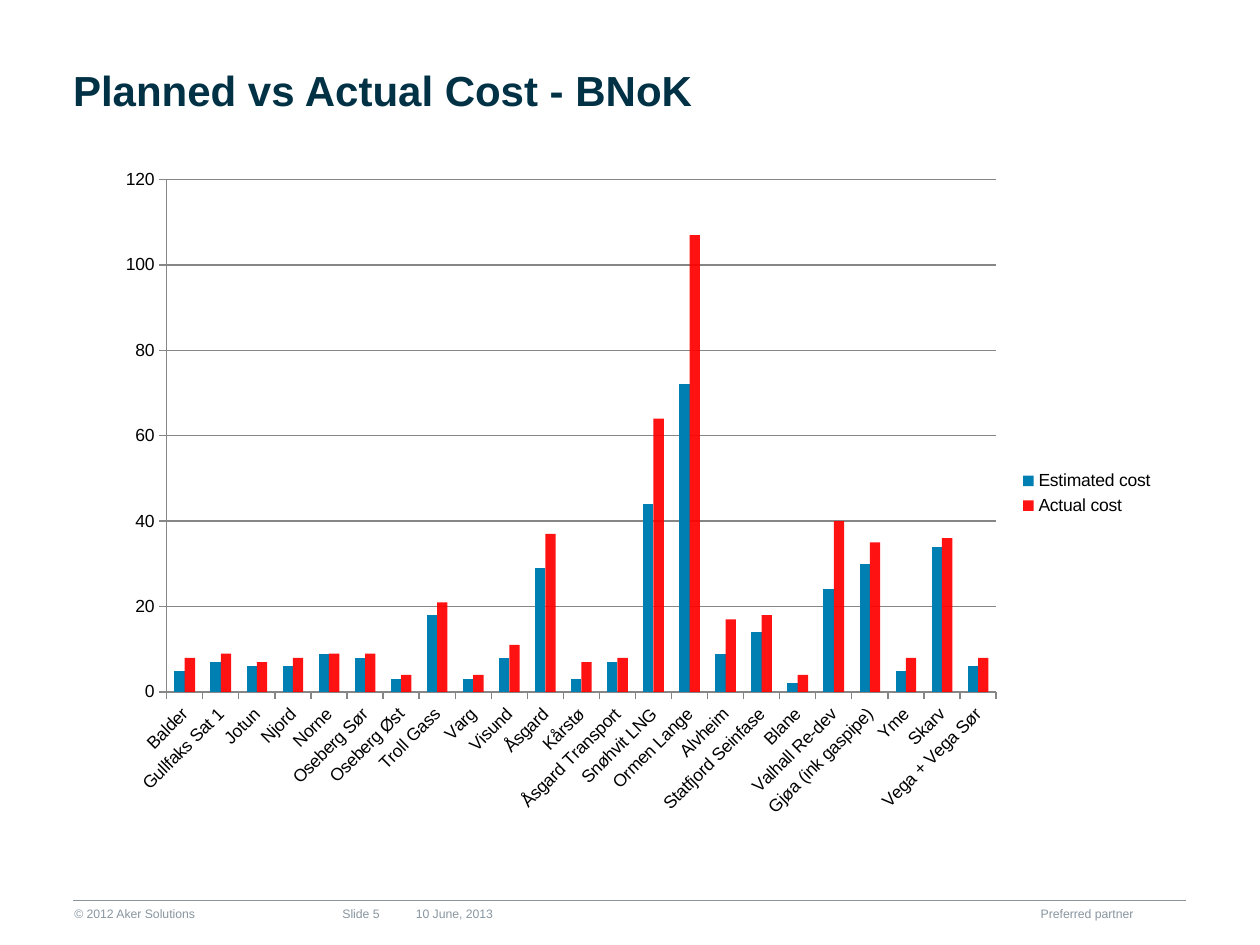
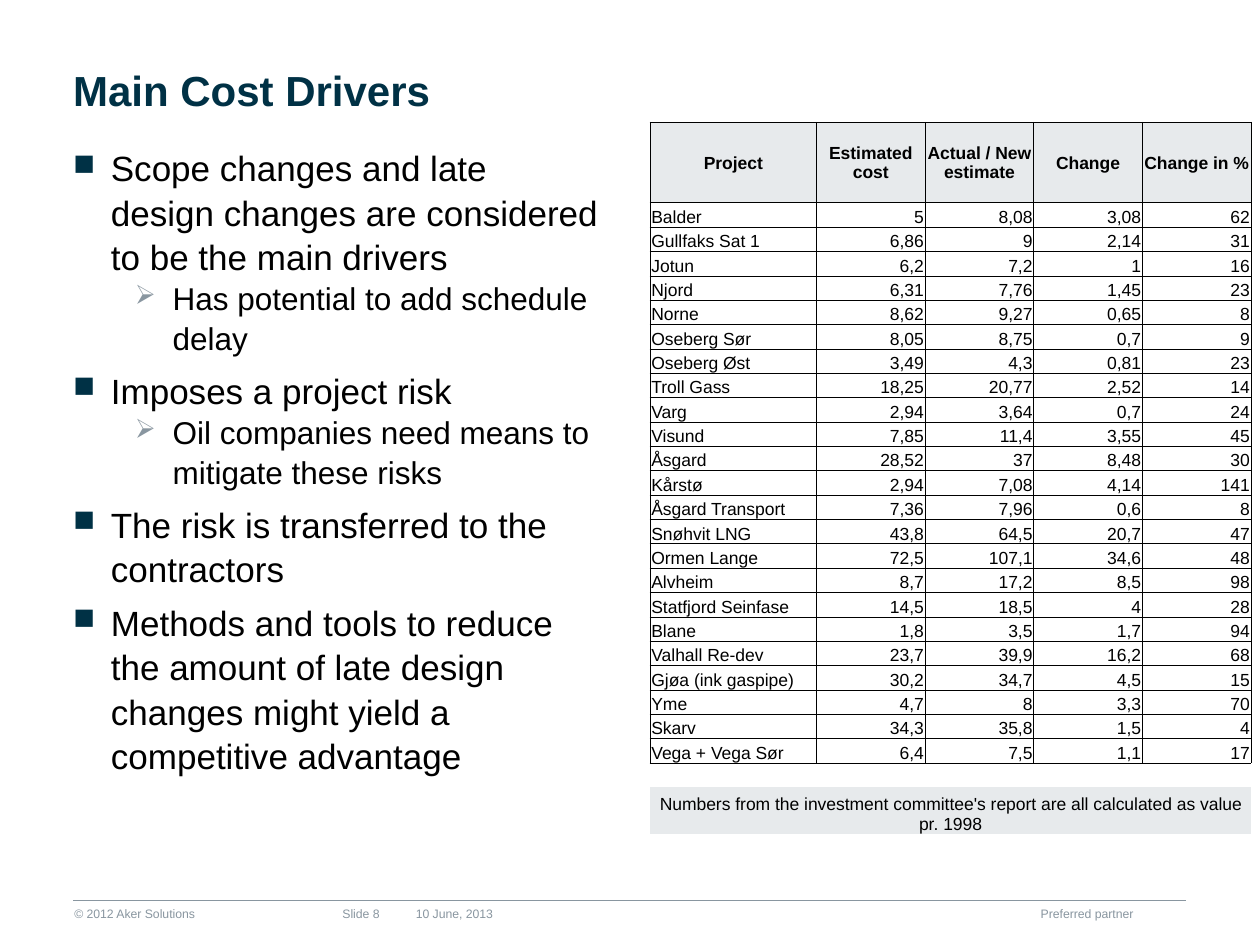
from dataclasses import dataclass

import lxml.etree
import pptx
import pptx.chart.data
import pptx.dml.color
import pptx.enum.chart
import pptx.enum.shapes
import pptx.enum.text
import pptx.oxml.ns
import pptx.util

Inches = pptx.util.Inches
Pt = pptx.util.Pt
Align = pptx.enum.text.PP_ALIGN
Anchor = pptx.enum.text.MSO_ANCHOR
qn = pptx.oxml.ns.qn


@dataclass(frozen=True)
class Theme:
    font: str = "Arial"
    navy: str = "003145"
    grey: str = "8996A0"
    black: str = "000000"
    shade: str = "E7EAEC"
    white: str = "FFFFFF"
    estimate: str = "007FB3"
    actual: str = "FF0000"
    axis: str = "868686"
    title_size: int = 24
    bullet_size: int = 20
    sub_bullet_size: int = 18
    data_size: int = 10
    footer_size: int = 7


THEME = Theme()

# Project, estimated cost, actual cost
PROJECTS = [
    ("Balder", 5, 8.08),
    ("Gullfaks Sat 1", 6.86, 9),
    ("Jotun", 6.2, 7.2),
    ("Njord", 6.31, 7.76),
    ("Norne", 8.62, 9.27),
    ("Oseberg Sør", 8.05, 8.75),
    ("Oseberg Øst", 3.49, 4.3),
    ("Troll Gass", 18.25, 20.77),
    ("Varg", 2.94, 3.64),
    ("Visund", 7.85, 11.4),
    ("Åsgard", 28.52, 37),
    ("Kårstø", 2.94, 7.08),
    ("Åsgard Transport", 7.36, 7.96),
    ("Snøhvit LNG", 43.8, 64.5),
    ("Ormen Lange", 72.5, 107.1),
    ("Alvheim", 8.7, 17.2),
    ("Statfjord Seinfase", 14.5, 18.5),
    ("Blane", 1.8, 3.5),
    ("Valhall Re-dev", 23.7, 39.9),
    ("Gjøa (ink gaspipe)", 30.2, 34.7),
    ("Yme", 4.7, 8),
    ("Skarv", 34.3, 35.8),
    ("Vega + Vega Sør", 6.4, 7.5),
]
HEADINGS = ["Project", "Estimated cost", "Actual / New estimate", "Change", "Change in %"]
NOTE = "Numbers from the investment committee's report are all calculated as value pr. 1998"

# Level, text
DRIVERS = [
    (0, "Scope changes and late design changes are considered to be the main drivers"),
    (1, "Has potential to add schedule delay"),
    (0, "Imposes a project risk"),
    (1, "Oil companies need means to mitigate these risks"),
    (0, "The risk is transferred to the contractors"),
    (0, "Methods and tools to reduce the amount of late design changes might yield "
        "a competitive advantage"),
]
# Per level: symbol, symbol colour, text size, left indent
BULLETS = [
    ("■", THEME.navy, THEME.bullet_size, 0.3),
    ("➢", THEME.grey, THEME.sub_bullet_size, 0.79),
]


def rgb(color):
    return pptx.dml.color.RGBColor.from_string(color)


def add_xml(parent, tag, **attributes):
    return lxml.etree.SubElement(parent, qn(tag), attributes)


def style_font(font, size, color, bold=False):
    font.name, font.size, font.bold = THEME.font, Pt(size), bold
    font.color.rgb = rgb(color)


def set_frame(frame, anchor, wrap=True):
    frame.margin_left = frame.margin_top = frame.margin_right = frame.margin_bottom = 0
    frame.vertical_anchor, frame.word_wrap = anchor, wrap


# Shared parts
def add_footer_text(page, box, text, align=Align.LEFT, wrap=True):
    frame = page.shapes.add_textbox(*map(Inches, box)).text_frame
    set_frame(frame, Anchor.BOTTOM, wrap)
    para = frame.paragraphs[0]
    para.text, para.alignment = text, align
    style_font(para.font, THEME.footer_size, THEME.grey)


def add_footer(page, box, number):
    left, top, width, height = box
    rule = page.shapes.add_connector(
        pptx.enum.shapes.MSO_CONNECTOR.STRAIGHT,
        Inches(left), Inches(top), Inches(left + width), Inches(top))
    rule.line.color.rgb = rgb(THEME.grey)
    rule.line.width = Pt(0.5)
    add_xml(rule._element.spPr, "a:effectLst")
    text_top = top + 0.02
    add_footer_text(page, (left + 0.01, text_top, 2.07, height), "© 2012 Aker Solutions")
    add_footer_text(page, (left + 1.98, text_top, 0.48, height), f"Slide {number} ", Align.RIGHT)
    add_footer_text(page, (left + 2.72, text_top, 0.99, height), "10 June, 2013")
    add_footer_text(page, (left + 7.68, text_top, 0.94, height), "Preferred partner", wrap=False)


def add_page(deck, title, number):
    page = deck.slides.add_slide(deck.slide_layouts.get_by_name("Title Only"))
    holder = page.shapes.title
    holder.left, holder.top, holder.width, holder.height = map(Inches, (0.58, 0.51, 8.83, 0.4))
    set_frame(holder.text_frame, Anchor.TOP, wrap=False)
    para = holder.text_frame.paragraphs[0]
    para.text, para.alignment = title, Align.LEFT
    style_font(para.font, THEME.title_size, THEME.navy, bold=True)
    add_footer(page, (0.58, 7.15, 8.83, 0.14), number)
    return page


# Cost chart
def add_cost_chart(page, box):
    names, estimates, actuals = zip(*PROJECTS)
    data = pptx.chart.data.CategoryChartData()
    data.categories = names
    data.add_series("Estimated cost", [round(cost) for cost in estimates])
    data.add_series("Actual cost", [round(cost) for cost in actuals])
    chart = page.shapes.add_chart(
        pptx.enum.chart.XL_CHART_TYPE.COLUMN_CLUSTERED, *map(Inches, box), data).chart
    style_font(chart.font, THEME.data_size, THEME.black)
    chart.has_title = False
    chart.has_legend = True
    chart.legend.position = pptx.enum.chart.XL_LEGEND_POSITION.RIGHT
    chart.legend.include_in_layout = False

    plot = chart.plots[0]
    plot.gap_width, plot.overlap, plot.vary_by_categories = 150, 0, False
    for series, color in zip(plot.series, (THEME.estimate, THEME.actual)):
        series.format.fill.solid()
        series.format.fill.fore_color.rgb = rgb(color)
        series.invert_if_negative = False
    actual_color = plot.series[1]._element.spPr.find(".//" + qn("a:srgbClr"))
    add_xml(actual_color, "a:alpha", val="93000")

    values, categories = chart.value_axis, chart.category_axis
    values.has_major_gridlines = True
    for line in (values.format.line, categories.format.line, values.major_gridlines.format.line):
        line.color.rgb = rgb(THEME.axis)
        line.width = Pt(0.75)
    for axis in (values, categories):
        axis.major_tick_mark = pptx.enum.chart.XL_TICK_MARK.OUTSIDE
        style_font(axis.tick_labels.font, THEME.data_size, THEME.black)
    values.tick_labels.number_format = "General"
    values.tick_labels.number_format_is_linked = False
    categories._element.find(".//" + qn("a:bodyPr")).set("rot", "-2700000")


# Bulleted list
def add_drivers(page, box):
    frame = page.shapes.add_textbox(*map(Inches, box)).text_frame
    set_frame(frame, Anchor.TOP)
    for index, (level, text) in enumerate(DRIVERS):
        symbol, color, size, indent = BULLETS[level]
        para = frame.add_paragraph() if index else frame.paragraphs[0]
        para.text, para.level = text, level
        properties = para._p.get_or_add_pPr()
        properties.set("marL", str(Inches(indent)))
        properties.set("indent", str(Inches(-0.3)))
        add_xml(add_xml(properties, "a:buClr"), "a:srgbClr", val=color)
        add_xml(properties, "a:buSzPct", val="85000")
        add_xml(properties, "a:buChar", char=symbol)
        para.line_spacing = 1.05
        para.space_before = Pt(6 if index and level == 0 else 0)
        style_font(para.font, size, THEME.black)


# Cost table
def set_borders(cell, sides):
    properties = cell._tc.get_or_add_tcPr()
    for side in "LRTB":
        line = add_xml(properties, f"a:ln{side}", w=str(Pt(0.5)))
        if side in sides:
            add_xml(add_xml(line, "a:solidFill"), "a:srgbClr", val=THEME.black)
        else:
            add_xml(line, "a:noFill")


def fill_cell(cell, text, align, anchor=Anchor.BOTTOM, bold=False, fill=None, borders="LRTB"):
    cell.margin_left = cell.margin_top = cell.margin_right = Inches(0.01)
    cell.margin_bottom = 0
    cell.vertical_anchor = anchor
    set_borders(cell, borders)
    if fill:
        cell.fill.solid()
        cell.fill.fore_color.rgb = rgb(fill)
    else:
        cell.fill.background()
    para = cell.text_frame.paragraphs[0]
    para.alignment = align
    if text:
        para.text = text
    else:
        add_xml(para._p, "a:endParaRPr", sz=str(THEME.data_size * 100))
    style_font(para.font, THEME.data_size, THEME.black, bold)


def decimal_comma(number):
    return f"{round(number, 2):g}".replace(".", ",")


def add_cost_table(page, box):
    left, top, width, height = box
    row_count, column_count = len(PROJECTS) + 3, len(HEADINGS)
    table = page.shapes.add_table(row_count, column_count, *map(Inches, box)).table
    table.first_row = table.horz_banding = False

    name_width, heading_height, note_height = 1.32, 0.64, 0.37
    row_height = (height - heading_height - note_height) / (row_count - 2)
    for column in table.columns:
        column.width = Inches((width - name_width) / (column_count - 1))
    table.columns[0].width = Inches(name_width)
    for row in table.rows:
        row.height = Inches(row_height)
    table.rows[0].height = Inches(heading_height)
    table.rows[row_count - 1].height = Inches(note_height)

    for column, heading in enumerate(HEADINGS):
        fill_cell(table.cell(0, column), heading, Align.CENTER, Anchor.MIDDLE, True, THEME.shade)
        fill_cell(table.cell(row_count - 2, column), "", Align.LEFT,
                  fill=THEME.white, borders="T")
        fill_cell(table.cell(row_count - 1, column), "" if column else NOTE, Align.CENTER,
                  fill=THEME.shade, borders="")
    table.cell(row_count - 1, 0).merge(table.cell(row_count - 1, column_count - 1))

    for row, (name, estimate, actual) in enumerate(PROJECTS, start=1):
        change = actual - estimate
        numbers = (estimate, actual, change, round(100 * change / estimate))
        fill_cell(table.cell(row, 0), name, Align.LEFT)
        for column, number in enumerate(numbers, start=1):
            fill_cell(table.cell(row, column), decimal_comma(number), Align.RIGHT)


# Slides
def add_cost_page(deck):
    page = add_page(deck, "Planned vs Actual Cost - BNoK", 5)
    add_cost_chart(page, (0.83, 1.24, 8.43, 5.35))


def add_drivers_page(deck):
    page = add_page(deck, "Main Cost Drivers", 8)
    add_drivers(page, (0.58, 1.15, 4.18, 5.43))
    add_cost_table(page, (5.16, 0.97, 4.77, 5.65))


def main():
    deck = pptx.Presentation()
    deck.slide_width, deck.slide_height = Inches(10), Inches(7.5)
    add_cost_page(deck)
    add_drivers_page(deck)
    deck.save("out.pptx")


if __name__ == "__main__":
    main()
